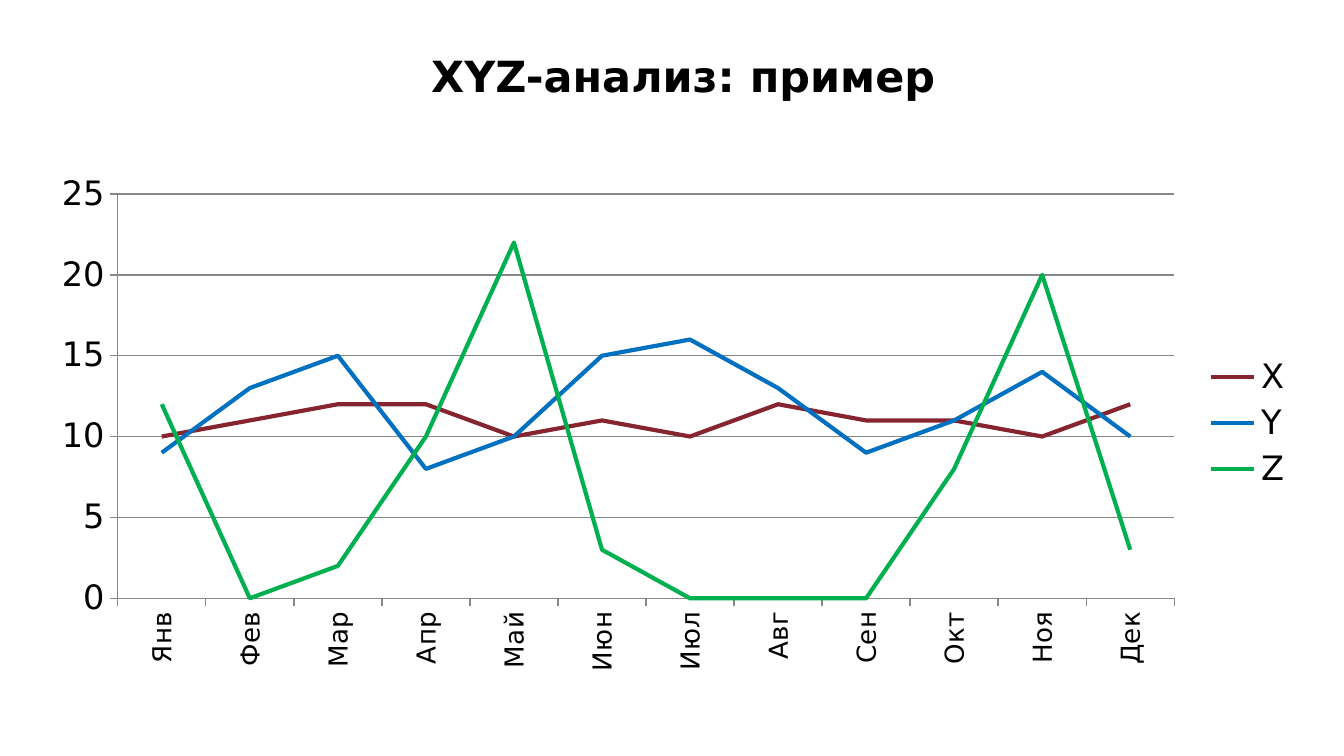
import pptx
import pptx.chart.data
import pptx.dml.color
import pptx.enum.chart
import pptx.enum.text
import pptx.oxml
import pptx.oxml.ns
import pptx.util
from pptx.dml.color import RGBColor
from pptx.util import Cm

BLACK = RGBColor(0x00, 0x00, 0x00)
GRAY = RGBColor(0x87, 0x87, 0x87)
MAROON = RGBColor(0x86, 0x24, 0x30)
BLUE = RGBColor(0x00, 0x70, 0xC0)
GREEN = RGBColor(0x00, 0xB0, 0x50)

MONTHS = ["Янв", "Фев", "Мар", "Апр", "Май", "Июн",
          "Июл", "Авг", "Сен", "Окт", "Ноя", "Дек"]
DEMAND = {
    "X": (MAROON, [10, 11, 12, 12, 10, 11, 10, 12, 11, 11, 10, 12]),
    "Y": (BLUE, [9, 13, 15, 8, 10, 15, 16, 13, 9, 11, 14, 10]),
    "Z": (GREEN, [12, 0, 2, 10, 22, 3, 0, 0, 0, 8, 20, 3]),
}


class Deck:
    font = "DejaVu Sans"

    def __init__(self, width, height):
        self.prs = pptx.Presentation()
        self.prs.slide_width, self.prs.slide_height = width, height
        self.s = self.prs.slides.add_slide(self.prs.slide_layouts[6])

    def style(self, font, size, bold=False):
        font.name, font.size, font.bold = self.font, pptx.util.Pt(size), bold
        font.color.rgb = BLACK

    def title(self, text, x, y, w, h):
        tf = self.s.shapes.add_textbox(x, y, w, h).text_frame
        tf.word_wrap = True
        tf.vertical_anchor = pptx.enum.text.MSO_ANCHOR.MIDDLE
        p = tf.paragraphs[0]
        p.text = text
        self.style(p.font, 23, bold=True)

    def line_chart(self, categories, series, x, y, w, h):
        data = pptx.chart.data.CategoryChartData()
        data.categories = categories
        for name, (_, values) in series.items():
            data.add_series(name, values)
        chart = self.s.shapes.add_chart(
            pptx.enum.chart.XL_CHART_TYPE.LINE, x, y, w, h, data).chart
        chart.has_title = False
        self.style(chart.font, 18)
        chart.has_legend = True
        chart.legend.position = pptx.enum.chart.XL_LEGEND_POSITION.RIGHT
        chart.legend.include_in_layout = False

        plot = chart.plots[0]
        plot.vary_by_categories = False
        for line, (color, _) in zip(plot.series, series.values()):
            line.smooth = False
            line.marker.style = pptx.enum.chart.XL_MARKER_STYLE.NONE
            line.format.line.color.rgb = color
            line.format.line.width = pptx.util.Pt(2.25)

        months, values = chart.category_axis, chart.value_axis
        values.minimum_scale, values.maximum_scale = 0, 25
        values.major_unit = 5
        values.has_major_gridlines = True
        self.style(months.tick_labels.font, 14)
        months._element.txPr.bodyPr.set("rot", "-5400000")
        for part in (months, values, values.major_gridlines):
            part.format.line.color.rgb = GRAY
            part.format.line.width = pptx.util.Pt(0.75)
        for axis in (months, values):
            axis.major_tick_mark = pptx.enum.chart.XL_TICK_MARK.OUTSIDE
        return chart

    def place_plot(self, chart, **fractions):
        """Fix the inner plot area, in fractions of the chart frame."""
        area = chart._chartSpace.chart.plotArea
        for old in area.findall(pptx.oxml.ns.qn("c:layout")):
            area.remove(old)
        sizes = "".join(f'<c:{key} val="{value}"/>' for key, value in fractions.items())
        area.insert(0, pptx.oxml.parse_xml(
            f'<c:layout {pptx.oxml.ns.nsdecls("c")}><c:manualLayout>'
            '<c:layoutTarget val="inner"/><c:xMode val="edge"/><c:yMode val="edge"/>'
            f'{sizes}</c:manualLayout></c:layout>'))


def main():
    deck = Deck(Cm(25.4), Cm(14.29))
    chart = deck.line_chart(MONTHS, DEMAND, Cm(0.69), Cm(3.1), Cm(24), Cm(9.8))
    deck.place_plot(chart, x=0.064, y=0.058, w=0.832, h=0.78)
    deck.title("XYZ-анализ: пример", Cm(7.9), Cm(0.74), Cm(16.87), Cm(1.35))
    deck.prs.save("out.pptx")


if __name__ == "__main__":
    main()
